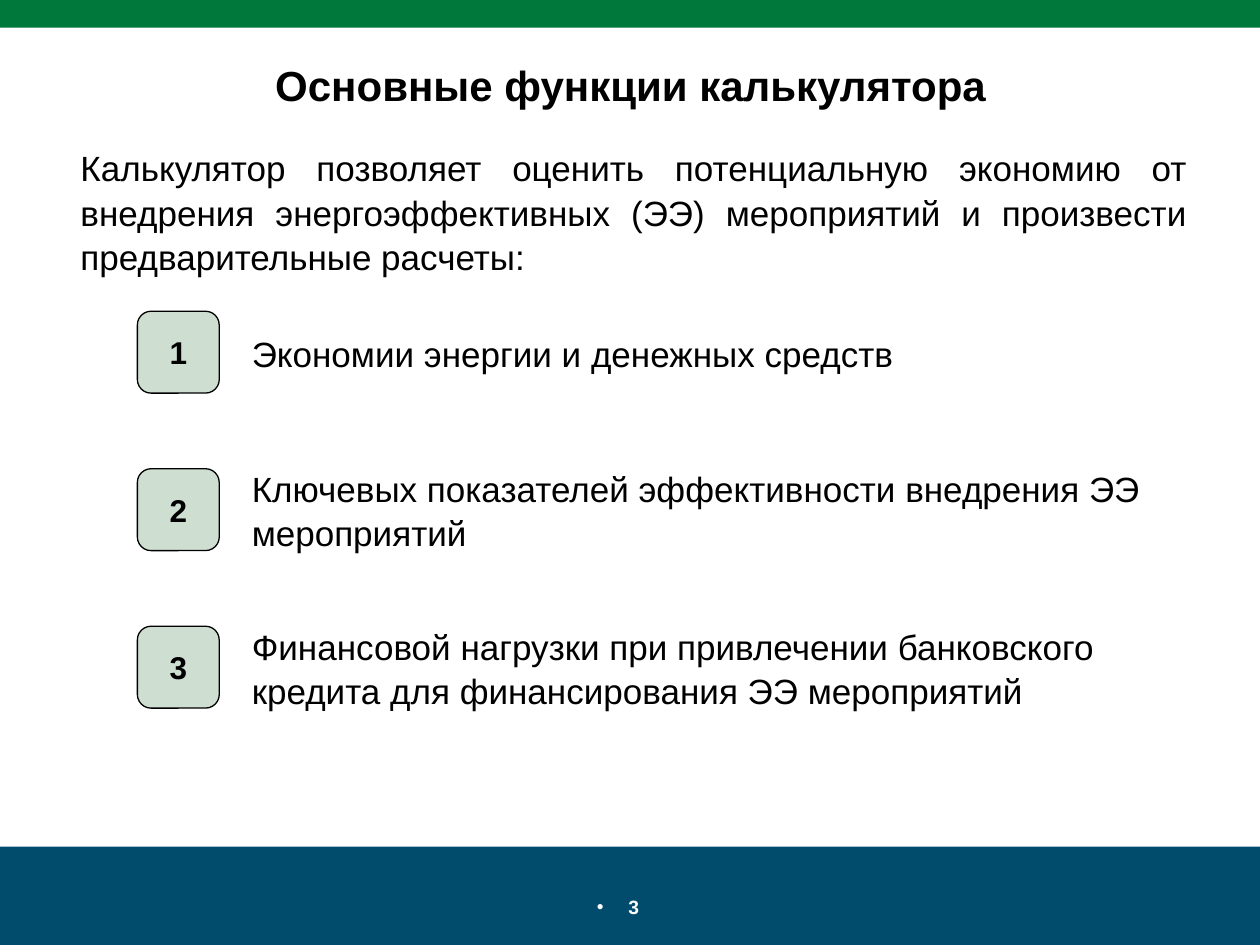
from lxml.etree import SubElement
from pptx import Presentation
from pptx.dml.color import RGBColor
from pptx.enum.shapes import MSO_SHAPE
from pptx.enum.text import MSO_ANCHOR, PP_ALIGN
from pptx.oxml.ns import qn
from pptx.util import Inches, Pt

COLORS = {
    "footer": "014C6D",
    "header": "00783C",
    "tile": "CEDFD2",
    "text": "000000",
    "light": "FFFFFF",
}
FUNCTIONS = [
    "Экономии энергии и денежных средств",
    "Ключевых показателей эффективности внедрения ЭЭ мероприятий",
    "Финансовой нагрузки при привлечении банковского кредита для финансирования ЭЭ мероприятий",
]
INTRO = (
    "Калькулятор позволяет оценить потенциальную экономию от внедрения "
    "энергоэффективных (ЭЭ) мероприятий и произвести предварительные расчеты:"
)
TILE_LEFT, TILE_TOP, TILE_SIZE, TILE_STEP = 1.09, 2.47, 0.65, 1.25


def color(name):
    """Return the named colour."""
    return RGBColor.from_string(COLORS[name])


def write_text(shape, text, size, bold=False, align=PP_ALIGN.LEFT,
               anchor=MSO_ANCHOR.MIDDLE, ink="text", spacing=1.0):
    """Write one formatted paragraph into a shape and return it."""
    frame = shape.text_frame
    frame.word_wrap = True
    frame.vertical_anchor = anchor
    para = frame.paragraphs[0]
    para.alignment = align
    para.line_spacing = spacing
    span = para.add_run()
    span.text = text
    for name, value in {"name": "Arial", "size": Pt(size), "bold": bold}.items():
        setattr(span.font, name, value)
    span.font.color.rgb = color(ink)
    return para


def add_block(page, kind, bounds, fill, outlined=False):
    """Add a flat filled shape, outlined on request."""
    block = page.shapes.add_shape(kind, *map(Inches, bounds))
    block.shadow.inherit = False
    block.fill.solid()
    block.fill.fore_color.rgb = color(fill)
    if outlined:
        block.line.color.rgb = color("text")
        block.line.width = Pt(0.75)
    else:
        block.line.fill.background()
    return block


def add_label(page, bounds, text, size, **style):
    """Add a text box with one paragraph and return both."""
    box = page.shapes.add_textbox(*map(Inches, bounds))
    return box, write_text(box, text, size, **style)


def add_title(page, text):
    """Place and fill the title placeholder."""
    title = page.shapes.title
    bounds = {"left": 0.38, "top": 0.42, "width": 9.25, "height": 0.5}
    for name, value in bounds.items():
        setattr(title, name, Inches(value))
    write_text(title, text, 24, bold=True, align=PP_ALIGN.CENTER)


def add_function(page, index, text):
    """Add a numbered tile with its description centred beside it."""
    top = TILE_TOP + index * TILE_STEP
    tile = add_block(page, MSO_SHAPE.ROUNDED_RECTANGLE,
                     (TILE_LEFT, top, TILE_SIZE, TILE_SIZE), "tile", outlined=True)
    write_text(tile, str(index + 1), 18, bold=True, align=PP_ALIGN.CENTER)
    height = 0.77
    label_top = top + (TILE_SIZE - height) / 2
    add_label(page, (1.9, label_top, 7.33, height), text, 20, spacing=1.05)


def add_page_number(page, number):
    """Add the bulleted page number in the footer."""
    box, para = add_label(page, (3.97, 7.04, 2.06, 0.31), number, 11, bold=True,
                          align=PP_ALIGN.CENTER, ink="light")
    box.text_frame.margin_right = Inches(0.29)
    properties = para._p.get_or_add_pPr()
    properties.set("marL", str(Inches(0.25)))
    properties.set("indent", str(-Inches(0.25)))
    SubElement(properties, qn("a:buFont"), typeface="Arial")
    SubElement(properties, qn("a:buChar"), char="•")


def main():
    """Build the slide and save the deck."""
    deck = Presentation()
    deck.slide_width, deck.slide_height = Inches(10), Inches(7.5)
    page = deck.slides.add_slide(deck.slide_layouts[5])
    add_block(page, MSO_SHAPE.RECTANGLE, (0, 6.72, 10, 0.78), "footer")
    add_block(page, MSO_SHAPE.RECTANGLE, (0, 0, 10, 0.22), "header")
    add_page_number(page, "3")
    add_title(page, "Основные функции калькулятора")
    add_label(page, (0.54, 1.1, 8.98, 1.11), INTRO, 20, align=PP_ALIGN.JUSTIFY,
              anchor=MSO_ANCHOR.TOP, spacing=1.05)
    for index, text in enumerate(FUNCTIONS):
        add_function(page, index, text)
    deck.save("out.pptx")


if __name__ == "__main__":
    main()
